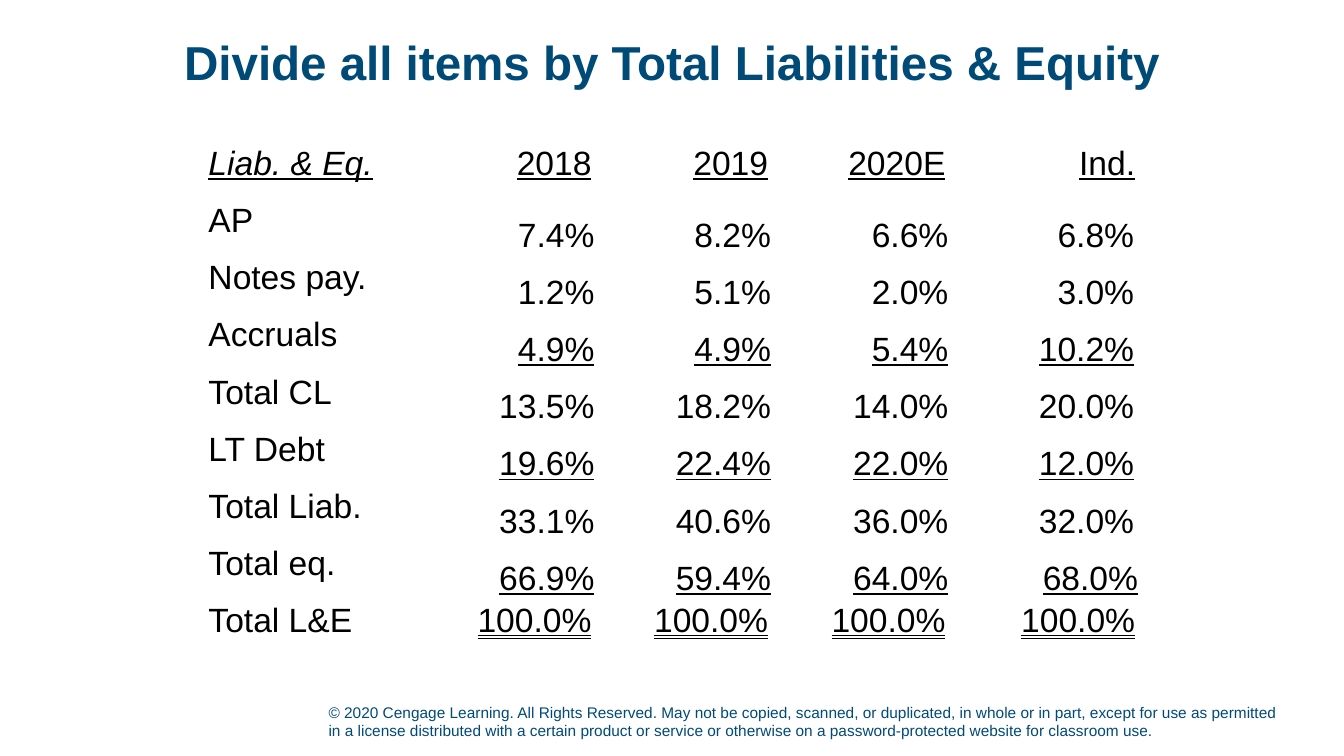
from pptx import Presentation
from pptx.dml.color import RGBColor
from pptx.enum.text import MSO_ANCHOR, MSO_UNDERLINE, PP_ALIGN
from pptx.util import Cm, Pt

NAVY = RGBColor(0x00, 0x4A, 0x78)
BLACK = RGBColor(0x00, 0x00, 0x00)
LEFT, CENTER, RIGHT = PP_ALIGN.LEFT, PP_ALIGN.CENTER, PP_ALIGN.RIGHT
TOP, MIDDLE, BOTTOM = MSO_ANCHOR.TOP, MSO_ANCHOR.MIDDLE, MSO_ANCHOR.BOTTOM
DOUBLE = MSO_UNDERLINE.DOUBLE_LINE

COL_WIDTHS = [5.66, 4.5, 4.45, 4.47, 4.78]
ROW_HEIGHT = 1.44
ROWS = [
    ("Liab. & Eq.", "2018", "2019", "2020E", "Ind."),
    ("AP", "7.4%", "8.2%", "6.6%", "6.8%"),
    ("Notes pay.", "1.2%", "5.1%", "2.0%", "3.0%"),
    ("Accruals", "4.9%", "4.9%", "5.4%", "10.2%"),
    ("Total CL", "13.5%", "18.2%", "14.0%", "20.0%"),
    ("LT Debt", "19.6%", "22.4%", "22.0%", "12.0%"),
    ("Total Liab.", "33.1%", "40.6%", "36.0%", "32.0%"),
    ("Total eq.", "66.9%", "59.4%", "64.0%", "68.0%"),
    ("Total L&E", "100.0%", "100.0%", "100.0%", "100.0%"),
]
HEADER, EQUITY, TOTAL = 0, 7, 8
UNDERLINES = {HEADER: True, 3: True, 5: True, EQUITY: True, TOTAL: DOUBLE}


def write(tf, text, size, color=BLACK, align=LEFT, bold=False, italic=False, underline=False):
    p = tf.paragraphs[0]
    p.alignment = align
    r = p.add_run()
    r.text = text
    r.font.name = "Arial"
    r.font.size = Pt(size)
    r.font.color.rgb = color
    r.font.bold = bold
    r.font.italic = italic
    r.font.underline = underline
    return p


prs = Presentation()
prs.slide_width, prs.slide_height = Cm(33.87), Cm(19.05)
s = prs.slides.add_slide(prs.slide_layouts[5])

title = s.shapes.title
title.left, title.top, title.width, title.height = Cm(2.34), Cm(0.38), Cm(29.21), Cm(2.54)
title.text_frame.vertical_anchor = MIDDLE
p = write(title.text_frame, "Divide all items by Total Liabilities & Equity", 34, NAVY, CENTER, bold=True)
p.line_spacing = 0.9

footer = s.shapes.add_textbox(Cm(8.03), Cm(17.5), Cm(24.46), Cm(1.27))
footer.text_frame.word_wrap = True
footer.text_frame.vertical_anchor = BOTTOM
write(
    footer.text_frame,
    "© 2020 Cengage Learning. All Rights Reserved. May not be copied, scanned, or duplicated, "
    "in whole or in part, except for use as permitted in a license distributed with a certain "
    "product or service or otherwise on a password-protected website for classroom use.",
    11, NAVY,
)

table = s.shapes.add_table(
    len(ROWS), len(COL_WIDTHS), Cm(5), Cm(3.53), Cm(sum(COL_WIDTHS)), Cm(ROW_HEIGHT * len(ROWS))
).table
table.first_row = False
table.horz_banding = False
for column, width in zip(table.columns, COL_WIDTHS):
    column.width = Cm(width)

for i, row in enumerate(ROWS):
    table.rows[i].height = Cm(ROW_HEIGHT)
    for j, text in enumerate(row):
        cell = table.cell(i, j)
        cell.fill.background()
        cell.vertical_anchor = TOP
        if j > 0 and HEADER < i < TOTAL:
            industry = j == 4 and i != EQUITY
            cell.vertical_anchor = BOTTOM
            cell.margin_top = cell.margin_bottom = Cm(0)
            cell.margin_left = Cm(0 if industry else 0.18)
            cell.margin_right = Cm(0.28 if industry else 0.18)
        write(
            cell.text_frame, text, 24,
            align=RIGHT if j else LEFT,
            italic=i == HEADER and j == 0,
            underline=UNDERLINES.get(i, False) if j or i == HEADER else False,
        )

prs.save("out.pptx")
